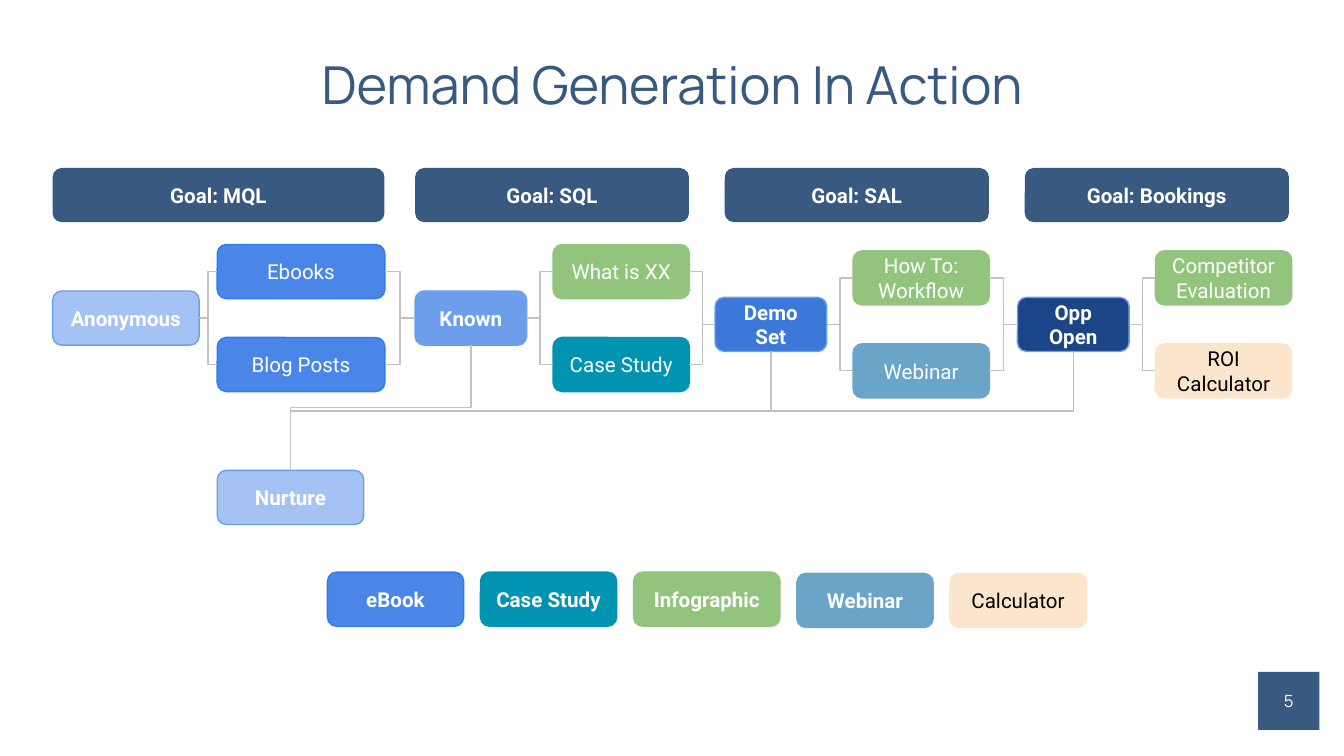
from lxml.etree import SubElement
from pptx import Presentation
from pptx.dml.color import RGBColor
from pptx.enum.shapes import MSO_CONNECTOR, MSO_SHAPE
from pptx.enum.text import MSO_ANCHOR, PP_ALIGN
from pptx.oxml.ns import qn
from pptx.util import Pt

NAVY = RGBColor(0x39, 0x5A, 0x80)
WHITE = RGBColor(0xFF, 0xFF, 0xFF)
BLACK = RGBColor(0, 0, 0)
GRAY = RGBColor(0xC2, 0xC2, 0xC2)
PALE = RGBColor(0xA4, 0xC2, 0xF4)
SKY = RGBColor(0x6D, 0x9E, 0xEB)
ROYAL = RGBColor(0x3C, 0x78, 0xD8)
DEEP = RGBColor(0x1C, 0x45, 0x87)
BLUE = RGBColor(0x4A, 0x86, 0xE8)
BLUE_EDGE = RGBColor(0x30, 0x7B, 0xF3)
GREEN = RGBColor(0x93, 0xC4, 0x7D)
TEAL = RGBColor(0x00, 0x93, 0xB2)
STEEL = RGBColor(0x6A, 0xA4, 0xC8)
PEACH = RGBColor(0xFC, 0xE5, 0xCD)

TITLE = "Demand Generation In Action"
PAGE = "5"
BOX_H = 29
ROW_STEP = 49.8
GOAL_Y = 90
NURTURE_Y = 252
LEGEND_X, LEGEND_GAP = 175.4, 9

GOALS = [
    ("Goal: MQL", 28.2, 177.8),
    ("Goal: SQL", 222.4, 146.7),
    ("Goal: SAL", 388.3, 141.5),
    ("Goal: Bookings", 549, 141.5),
]
STAGES = [
    ("Anonymous", 28.2, 78.5, PALE, 116.4, 89.8, 131, [("Ebooks", BLUE), ("Blog Posts", BLUE)]),
    ("Known", 222.4, 59.8, SKY, 296.3, 73, 131, [("What is XX", GREEN), ("Case Study", TEAL)]),
    ("Demo Set", 383.1, 59.8, ROYAL, 457, 73, 134.4, [("How To: Workflow", GREEN), ("Webinar", STEEL)]),
    ("Opp Open", 545.1, 59.8, DEEP, 619, 73, 134.4, [("Competitor Evaluation", GREEN), ("ROI Calculator", PEACH)]),
]
LEGEND = [
    ("eBook", 73, BLUE, 306.5),
    ("Case Study", 73, TEAL, 306.5),
    ("Infographic", 78.5, GREEN, 306.5),
    ("Webinar", 73, STEEL, 307.2),
    ("Calculator", 73, PEACH, 307.2),
]

prs = Presentation()
prs.slide_width, prs.slide_height = Pt(720), Pt(405)
s = prs.slides.add_slide(prs.slide_layouts[6])


def write(sp, text, font, size, color, bold=False, inset=0):
    tf = sp.text_frame
    tf.word_wrap = True
    tf.vertical_anchor = MSO_ANCHOR.MIDDLE
    tf.margin_left = tf.margin_right = tf.margin_top = tf.margin_bottom = Pt(inset)
    p = tf.paragraphs[0]
    p.alignment = PP_ALIGN.CENTER
    r = p.add_run()
    r.text = text
    r.font.name, r.font.size, r.font.bold = font, Pt(size), bold
    r.font.color.rgb = color
    return p


def add_panel(kind, x, y, w, h, fill, line=None):
    sp = s.shapes.add_shape(kind, Pt(x), Pt(y), Pt(w), Pt(h))
    sp.shadow.inherit = False
    sp.fill.solid()
    sp.fill.fore_color.rgb = fill
    if line is None:
        sp.line.fill.background()
    else:
        sp.line.color.rgb = line
        sp.line.width = Pt(0.75)
    return sp


def add_box(text, x, y, w, fill, line=None, bold=True):
    sp = add_panel(MSO_SHAPE.ROUNDED_RECTANGLE, x, y, w, BOX_H, fill, line)
    ink = BLACK if fill == PEACH else WHITE
    write(sp, text, "Roboto", 11, ink, bold and fill != PEACH, 7.2)
    return sp


def edge(fill):
    return BLUE_EDGE if fill == BLUE else fill


def link(a, a_side, b, b_side):
    c = s.shapes.add_connector(MSO_CONNECTOR.ELBOW, 0, 0, 0, 0)
    c.begin_connect(a, a_side)
    c.end_connect(b, b_side)
    c.line.color.rgb = GRAY
    c.line.width = Pt(0.75)
    SubElement(c._element.spPr, qn("a:effectLst"))
    return c


def link_down(a, b):
    c = link(a, 2, b, 0)
    dx, dy = c.begin_x - c.end_x, c.end_y - c.begin_y
    mid_x, mid_y = (c.begin_x + c.end_x) // 2, (c.begin_y + c.end_y) // 2
    c.begin_x, c.end_x = mid_x - dy // 2, mid_x + dy // 2
    c.begin_y, c.end_y = mid_y - dx // 2, mid_y + dx // 2
    c.rotation = 90


title = s.shapes.add_textbox(Pt(45), Pt(31.7), Pt(630), Pt(30.2))
write(title, TITLE, "Manrope", 28, NAVY).line_spacing = 0.9
page = add_panel(MSO_SHAPE.RECTANGLE, 674, 360, 32.8, 31, NAVY)
write(page, PAGE, "Manrope", 9, WHITE)

for text, x, w in GOALS:
    add_box(text, x, GOAL_Y, w, NAVY)

stages, previous = [], []
for text, x, w, fill, asset_x, asset_w, top, assets in STAGES:
    stage = add_box(text, x, top + ROW_STEP / 2, w, fill, SKY)
    for asset in previous:
        link(asset, 3, stage, 1)
    previous = []
    for row, (label, color) in enumerate(assets):
        asset = add_box(label, asset_x, top + row * ROW_STEP, asset_w, color, edge(color), False)
        link(stage, 3, asset, 1)
        previous.append(asset)
    stages.append(stage)

nurture = add_box("Nurture", 116.4, NURTURE_Y, 78.5, PALE, SKY)
for stage in stages[1:]:
    link_down(stage, nurture)

x = LEGEND_X
for text, w, fill, y in LEGEND:
    add_box(text, x, y, w, fill, edge(fill))
    x += w + LEGEND_GAP

prs.save("out.pptx")
